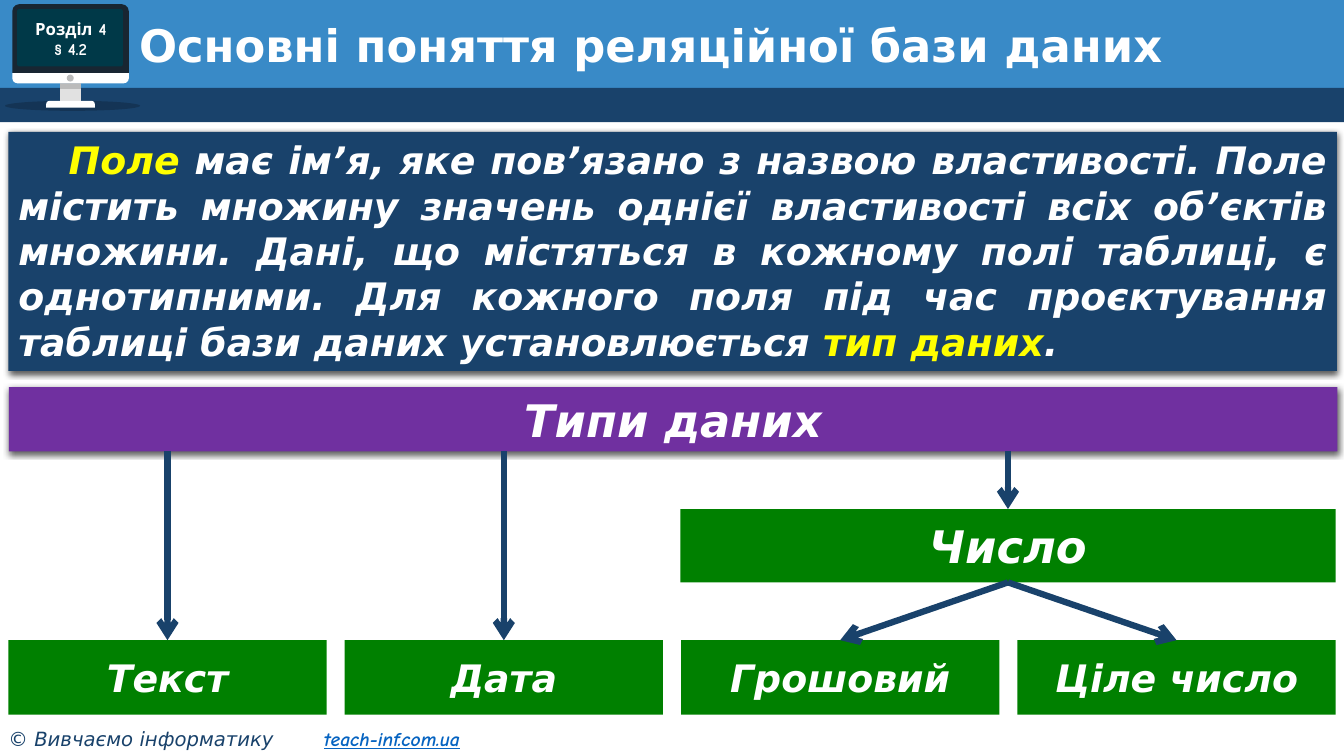
from lxml import etree
from pptx import Presentation
from pptx.dml.color import RGBColor
from pptx.enum.shapes import MSO_CONNECTOR, MSO_SHAPE
from pptx.enum.text import MSO_ANCHOR, PP_ALIGN
from pptx.oxml import parse_xml
from pptx.oxml.ns import nsdecls, qn
from pptx.util import Pt

NAVY, WHITE, YELLOW, GREEN = "19426B", "FFFFFF", "FFFF00", "008000"

deck = Presentation()
deck.slide_width, deck.slide_height = Pt(960), Pt(540)
slide = deck.slides.add_slide(deck.slide_layouts[6])


def block(kind, left, top, width, height, color, shadow=False):
    shape = slide.shapes.add_shape(kind, Pt(left), Pt(top), Pt(width), Pt(height))
    shape.shadow.inherit = False
    shape.fill.solid()
    shape.fill.fore_color.rgb = RGBColor.from_string(color)
    shape.line.fill.background()
    if shadow:
        shape._element.spPr.find(qn("a:effectLst")).append(parse_xml(
            f'<a:outerShdw {nsdecls("a")} blurRad="57150" dist="19050" dir="5400000" algn="ctr" rotWithShape="0">'
            '<a:srgbClr val="000000"><a:alpha val="63000"/></a:srgbClr></a:outerShdw>'))
    return shape


def write(shape, *lines, size=27, font="DejaVu Sans", bold=True, italic=True,
          align=PP_ALIGN.CENTER, anchor=MSO_ANCHOR.MIDDLE):
    """Each line is a list of (text, color) or (text, color, overrides)."""
    frame = shape.text_frame
    frame.word_wrap = True
    frame.vertical_anchor = anchor
    for number, line in enumerate(lines):
        paragraph = frame.add_paragraph() if number else frame.paragraphs[0]
        paragraph.alignment = align
        for text, color, *overrides in line:
            run = paragraph.add_run()
            run.text = text
            run.font.size, run.font.name = Pt(size), font
            run.font.bold, run.font.italic = bold, italic
            run.font.color.rgb = RGBColor.from_string(color)
            for name, value in (overrides[0] if overrides else {}).items():
                setattr(run.font, name, value)
    return frame


# Header bands
block(MSO_SHAPE.RECTANGLE, 0, 0, 960, 65.5, "398AC7")
block(MSO_SHAPE.RECTANGLE, 0, 62.8, 960, 24.5, NAVY)

# Computer with the section number
ground = block(MSO_SHAPE.OVAL, 3.6, 72, 96.5, 7.2, "000000")
etree.SubElement(ground._element.spPr.find(".//" + qn("a:srgbClr")), qn("a:alpha"), val="20000")
bezel = block(MSO_SHAPE.ROUND_2_SAME_RECTANGLE, 8.8, 3, 83.2, 49.3, "182632")
bezel.adjustments[0] = 0.1
chin = block(MSO_SHAPE.ROUND_2_SAME_RECTANGLE, 8.8, 52.3, 83.2, 7.2, WHITE)
chin.adjustments[0] = 0.5
chin.rotation = 180
block(MSO_SHAPE.RECTANGLE, 43, 59.5, 14.8, 12.5, "E1E1E1")
block(MSO_SHAPE.RECTANGLE, 43, 59.5, 14.8, 4, "BBBBBB")
stand = block(MSO_SHAPE.ROUND_2_SAME_RECTANGLE, 33, 72, 34.8, 5, WHITE)
stand.adjustments[0] = 0.5
block(MSO_SHAPE.OVAL, 47.7, 53.3, 5, 5, "BBBBBB")
screen = block(MSO_SHAPE.ROUNDED_RECTANGLE, 12.2, 6.5, 75.6, 41, "003948")
screen.adjustments[0] = 0.04
section = slide.shapes.add_textbox(Pt(9.2), Pt(6.5), Pt(82.8), Pt(42.5))
write(section, [("Розділ 4", WHITE)], [("§ 4.2", WHITE)], size=12, font="Comic Neue", italic=False)

# Title
title = slide.shapes.add_textbox(Pt(92.2), Pt(13), Pt(843.8), Pt(41.8))
heading = write(title, [("Основні поняття реляційної бази даних", WHITE)],
                size=32, italic=False, align=PP_ALIGN.LEFT)
heading.paragraphs[0].line_spacing = 0.9

# Definition
definition = block(MSO_SHAPE.RECTANGLE, 6, 94.3, 949, 170.6, NAVY, shadow=True)
explanation = write(definition, [
    ("Поле", YELLOW),
    (" має ім’я, яке пов’язано з назвою властивості. Поле містить множину значень однієї "
     "властивості всіх об’єктів множини. Дані, що містяться в кожному полі таблиці, є "
     "однотипними. Для кожного поля під час проєктування таблиці бази даних установлюється ", WHITE),
    ("тип даних", YELLOW),
    (".", WHITE)], align=PP_ALIGN.JUSTIFY, anchor=MSO_ANCHOR.TOP)
explanation.paragraphs[0]._p.get_or_add_pPr().set("indent", str(Pt(36)))

# Tree of data types
TYPES_BOTTOM = 322.5
data_types = block(MSO_SHAPE.RECTANGLE, 6.3, 276.5, 949, TYPES_BOTTOM - 276.5, "7030A0", shadow=True)
write(data_types, [("Типи даних", WHITE)], size=32)
number_type = block(MSO_SHAPE.RECTANGLE, 486, 363.6, 468, 52.4, GREEN)
write(number_type, [("Число", WHITE)], size=32)

leaves = []
for column, label in enumerate(["Текст", "Дата", "Грошовий", "Ціле число"]):
    leaf = block(MSO_SHAPE.RECTANGLE, 6 + 240.25 * column, 457.3, 227.3, 53.2, GREEN)
    write(leaf, [(label, WHITE)])
    leaves.append(leaf)
text_type, date_type, money_type, integer_type = leaves

# Arrows from each type to its subtypes
for parent, child in [(data_types, text_type), (data_types, date_type), (data_types, number_type),
                      (number_type, money_type), (number_type, integer_type)]:
    middle = child.left + child.width // 2
    arrow = slide.shapes.add_connector(MSO_CONNECTOR.STRAIGHT, middle, Pt(TYPES_BOTTOM), middle, child.top)
    if parent is number_type:
        arrow.begin_connect(parent, 2)
    arrow.end_connect(child, 0)
    arrow.line.width = Pt(4.5)
    arrow.line.color.rgb = RGBColor.from_string(NAVY)
    etree.SubElement(arrow.line._get_or_add_ln(), qn("a:tailEnd"), type="arrow")
    etree.SubElement(arrow._element.spPr, qn("a:effectLst"))

# Footer
footer = slide.shapes.add_textbox(Pt(0), Pt(515.5), Pt(375), Pt(24.5))
footer.text_frame.margin_left = Pt(6)
tabs = etree.SubElement(footer.text_frame.paragraphs[0]._p.get_or_add_pPr(), qn("a:tabLst"))
etree.SubElement(tabs, qn("a:tab"), pos=str(Pt(225.4)), algn="l")
write(footer, [("© Вивчаємо інформатику\t", NAVY),
               ("teach-inf.com.ua", "0563C1", {"name": "Comic Neue", "bold": True, "underline": True})],
      size=14, bold=False, align=PP_ALIGN.LEFT, anchor=MSO_ANCHOR.TOP)

deck.save("out.pptx")
